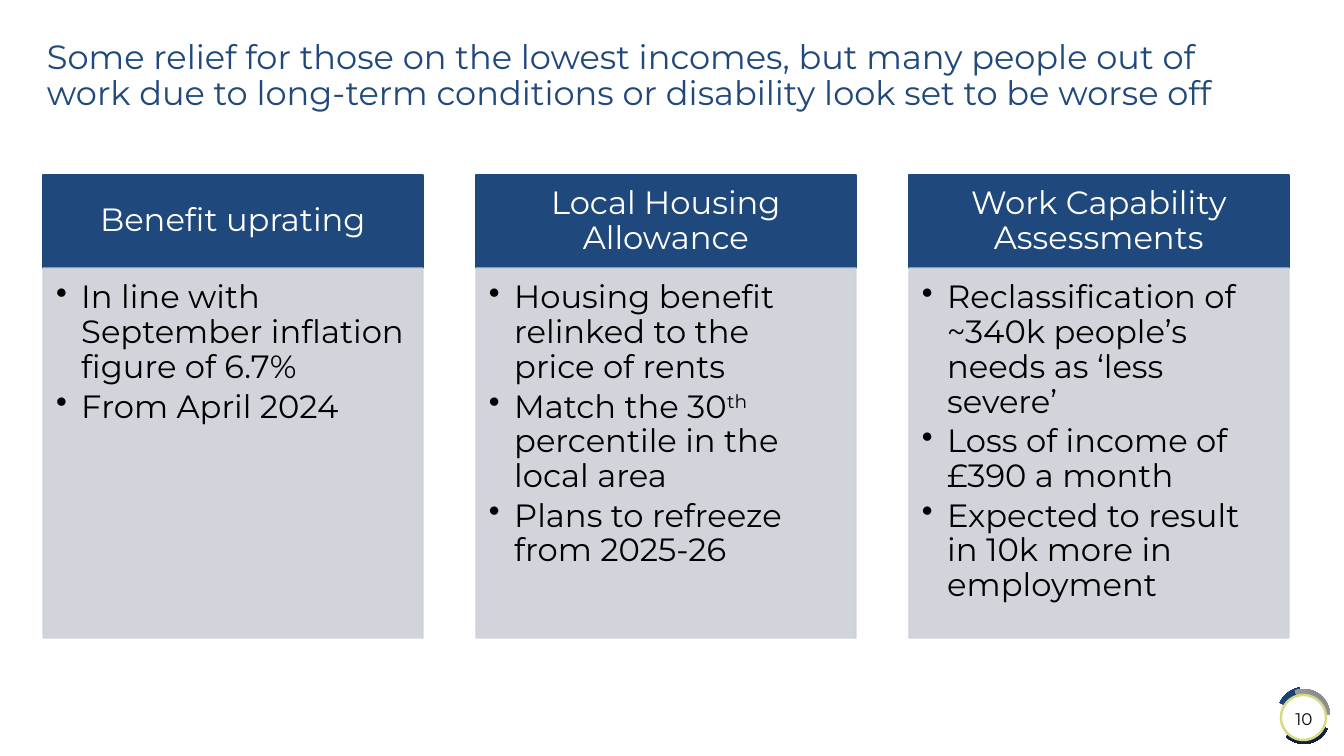
"""Build a slide with three columns on benefit changes and a numbered ring badge."""
import pptx
import pptx.dml.color
import pptx.enum.shapes
import pptx.enum.text
import pptx.oxml
import pptx.oxml.ns
import pptx.util

PX = 914400 / 100.8
NAVY, DARK, GREY, WHITE, BLACK = "1F497D", "0E2138", "CDD0D7", "FFFFFF", "000000"
SHAPE = pptx.enum.shapes.MSO_SHAPE
ANCHOR = pptx.enum.text.MSO_ANCHOR
ALIGN = pptx.enum.text.PP_ALIGN


def rgb(value):
    return pptx.dml.color.RGBColor.from_string(value)


def write(shape, paragraphs, size, color, anchor, align, margins, **spacing):
    frame = shape.text_frame
    frame.word_wrap = True
    frame.auto_size = pptx.enum.text.MSO_AUTO_SIZE.NONE
    frame.vertical_anchor = anchor
    for side, margin in zip(("left", "top", "right", "bottom"), margins):
        setattr(frame, f"margin_{side}", round(margin * PX))
    for index, text in enumerate(paragraphs):
        paragraph = frame.add_paragraph() if index else frame.paragraphs[0]
        for name, value in {"alignment": align, **spacing}.items():
            setattr(paragraph, name, value)
        for part, words in enumerate(text.split("^")):
            run = paragraph.add_run()
            run.text = words
            for name, value in {"name": "Montserrat", "size": pptx.util.Pt(size)}.items():
                setattr(run.font, name, value)
            run.font.color.rgb = rgb(color)
            if part % 2:
                run.font._element.set("baseline", "30000")


presentation = pptx.Presentation()
presentation.slide_width = round(1344 * PX)
presentation.slide_height = round(756 * PX)
slide = presentation.slides.add_slide(presentation.slide_layouts[5])

title = slide.shapes.title
for name, value in {"left": 37, "top": 27, "width": 1258, "height": 99}.items():
    setattr(title, name, round(value * PX))
write(title, ["Some relief for those on the lowest incomes, but many people out of work "
              "due to long-term conditions or disability look set to be worse off"],
      24, NAVY, ANCHOR.MIDDLE, ALIGN.LEFT, (10, 5, 10, 5), line_spacing=0.9)

columns = [
    ("Benefit uprating",
     ["In line with September inflation figure of 6.7%", "From April 2024"]),
    ("Local Housing Allowance",
     ["Housing benefit relinked to the price of rents",
      "Match the 30^th^ percentile in the local area",
      "Plans to refreeze from 2025-26"]),
    ("Work Capability Assessments",
     ["Reclassification of ~340k people’s needs as ‘less severe’",
      "Loss of income of £390 a month",
      "Expected to result in 10k more in employment"]),
]
for index, (heading, points) in enumerate(columns):
    left = 43 + 433 * index
    boxes = []
    for top, height, color in ((175, 93, NAVY), (268, 370, GREY)):
        box = slide.shapes.add_shape(
            SHAPE.RECTANGLE, *(round(value * PX) for value in (left, top, 380, height)))
        box.shadow.inherit = False
        box.fill.solid()
        box.fill.fore_color.rgb = rgb(color)
        box.line.color.rgb = rgb(color)
        box.line.width = pptx.util.Pt(1)
        boxes.append(box)
    header, body = boxes
    write(header, [heading], 23, WHITE, ANCHOR.MIDDLE, ALIGN.CENTER,
          (18, 10, 18, 10), line_spacing=0.9)
    write(body, points, 23, BLACK, ANCHOR.TOP, ALIGN.LEFT, (13, 13, 18, 20),
          line_spacing=0.9, space_after=pptx.util.Pt(3.5))
    for color in body._element.spPr.iter(pptx.oxml.ns.qn("a:srgbClr")):
        pptx.oxml.ns.qn("a:alpha")
        color.append(pptx.oxml.parse_xml(
            f'<a:alpha {pptx.oxml.ns.nsdecls("a")} val="90000"/>'))
    for paragraph in body.text_frame.paragraphs:
        properties = paragraph._p.get_or_add_pPr()
        for name, value in {"marL": "228600", "indent": "-228600"}.items():
            properties.set(name, value)
        properties.append(pptx.oxml.parse_xml(
            f'<a:buChar {pptx.oxml.ns.nsdecls("a")} char="•"/>'))

arcs = [
    ((1278, 692, 52, 52), 0, 14.78, (NAVY, DARK)),
    ((1277, 687, 55, 55), 126.6, 47.46, (DARK, NAVY)),
    ((1278, 689, 52, 52), 225.1, 14.78, ("D9D9D9", "808080")),
]
for place, rotation, start, colors in arcs:
    arc = slide.shapes.add_shape(SHAPE.PIE, *(round(value * PX) for value in place))
    arc.shadow.inherit = False
    arc.rotation = rotation
    arc.adjustments[0] = start
    arc.adjustments[1] = 79.94
    arc.line.fill.background()
    arc.fill.gradient()
    arc.fill.gradient_angle = 270
    for stop, position, color in zip(arc.fill.gradient_stops, (0, 0.87), colors):
        stop.position = position
        stop.color.rgb = rgb(color)

ring = slide.shapes.add_shape(
    SHAPE.OVAL, *(round(value * PX) for value in (1281, 695, 45, 45)))
ring.shadow.inherit = False
ring.fill.solid()
ring.fill.fore_color.rgb = rgb(WHITE)
ring.line.color.rgb = rgb("D7D987")
ring.line.width = pptx.util.Pt(1.75)

number = slide.shapes.add_textbox(*(round(value * PX) for value in (1278, 699, 52, 40)))
write(number, ["10"], 12, BLACK, ANCHOR.MIDDLE, ALIGN.CENTER, (10, 5, 10, 5))

presentation.save("out.pptx")
